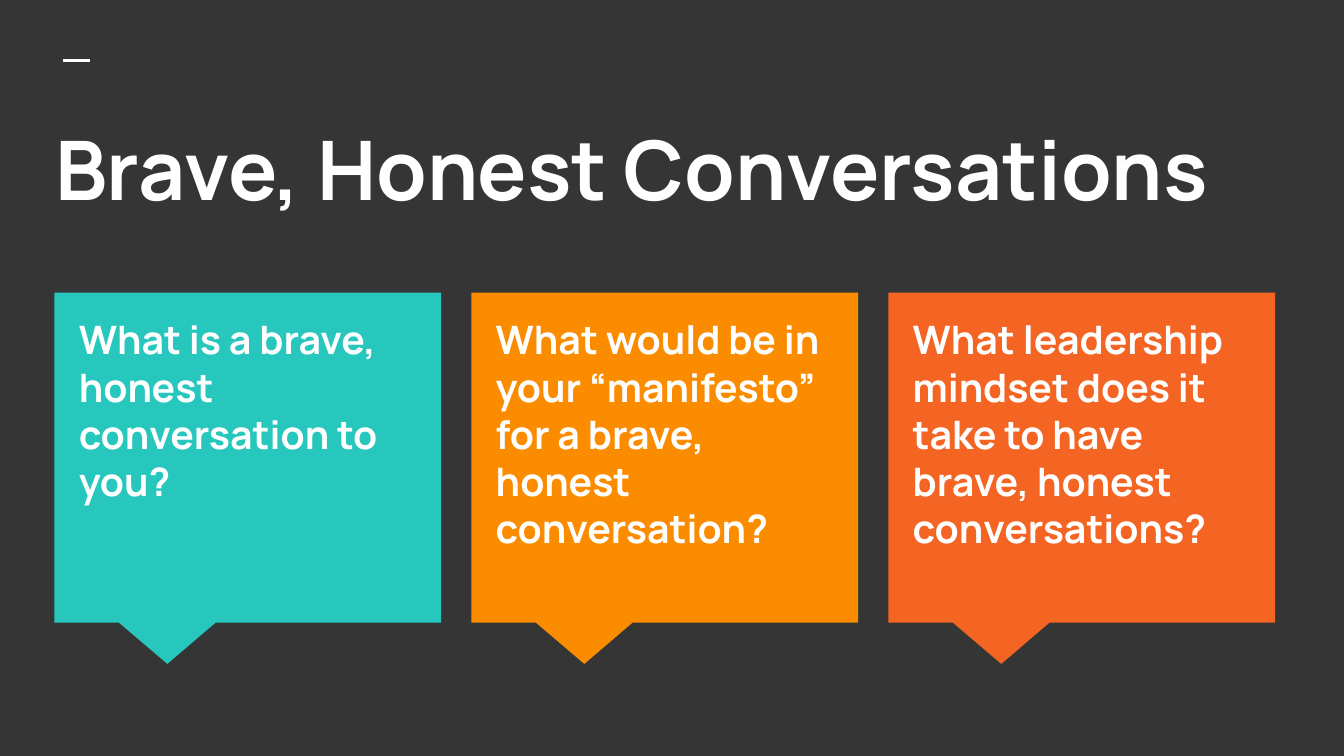
from lxml import etree
from pptx import Presentation
from pptx.dml.color import RGBColor
from pptx.enum import shapes, text
from pptx.oxml import ns
from pptx.util import Cm, Pt

WHITE = RGBColor(0xFF, 0xFF, 0xFF)
CHARCOAL = RGBColor(0x35, 0x35, 0x35)
TEAL = RGBColor(0x27, 0xC7, 0xBD)
AMBER = RGBColor(0xFB, 0x8C, 0x00)
ORANGE = RGBColor(0xF4, 0x65, 0x24)

FONT = "Manrope"
INSET = Cm(0.25)
FIRST_CARD_LEFT = 1.03
CARD_PITCH = 7.88
QUESTIONS = [
    ("What is a brave, honest conversation to you?", TEAL),
    ("What would be in your “manifesto” for a brave, honest conversation?", AMBER),
    ("What leadership mindset does it take to have brave, honest conversations?", ORANGE),
]


def write_text(shape, words, size):
    """Fill a shape with bold white text set from its top left corner."""
    frame = shape.text_frame
    frame.word_wrap = True
    frame.auto_size = text.MSO_AUTO_SIZE.NONE
    frame.vertical_anchor = text.MSO_ANCHOR.TOP
    frame.margin_left = frame.margin_right = INSET
    frame.margin_top = frame.margin_bottom = INSET
    paragraph = frame.paragraphs[0]
    paragraph.alignment = text.PP_ALIGN.LEFT
    run = paragraph.add_run()
    run.text = words
    run.font.name = FONT
    run.font.size = Pt(size)
    run.font.bold = True
    run.font.color.rgb = WHITE


def add_dash(slide):
    """Draw the short accent line above the title."""
    dash = slide.shapes.add_connector(
        shapes.MSO_CONNECTOR.STRAIGHT, Cm(1.19), Cm(1.14), Cm(1.7), Cm(1.14))
    dash.line.color.rgb = WHITE
    dash.line.width = Pt(1.5)
    etree.SubElement(dash._element.spPr, ns.qn("a:effectLst"))


def add_title(slide, words):
    """Place and fill the slide title."""
    title = slide.shapes.title
    title.left, title.top = Cm(0.79), Cm(1.98)
    title.width, title.height = Cm(23.95), Cm(2.84)
    write_text(title, words, 44)


def add_question(slide, left, words, color):
    """Add a speech callout with its question."""
    callout = slide.shapes.add_shape(
        shapes.MSO_SHAPE.RECTANGULAR_CALLOUT, Cm(left), Cm(5.53), Cm(7.31), Cm(6.24))
    callout.adjustments[0] = -0.208
    callout.adjustments[1] = 0.625
    callout.shadow.inherit = False
    callout.fill.solid()
    callout.fill.fore_color.rgb = color
    callout.line.fill.background()
    question = slide.shapes.add_textbox(Cm(left + 0.21), Cm(5.72), Cm(6.88), Cm(5.56))
    write_text(question, words, 21)


def main():
    """Build and save the slide."""
    presentation = Presentation()
    presentation.slide_width = Cm(25.4)
    presentation.slide_height = Cm(14.29)
    slide = presentation.slides.add_slide(presentation.slide_layouts.get_by_name("Title Only"))
    slide.background.fill.solid()
    slide.background.fill.fore_color.rgb = CHARCOAL
    add_dash(slide)
    add_title(slide, "Brave, Honest Conversations")
    for index, (words, color) in enumerate(QUESTIONS):
        add_question(slide, FIRST_CARD_LEFT + index * CARD_PITCH, words, color)
    presentation.save("out.pptx")


if __name__ == "__main__":
    main()
